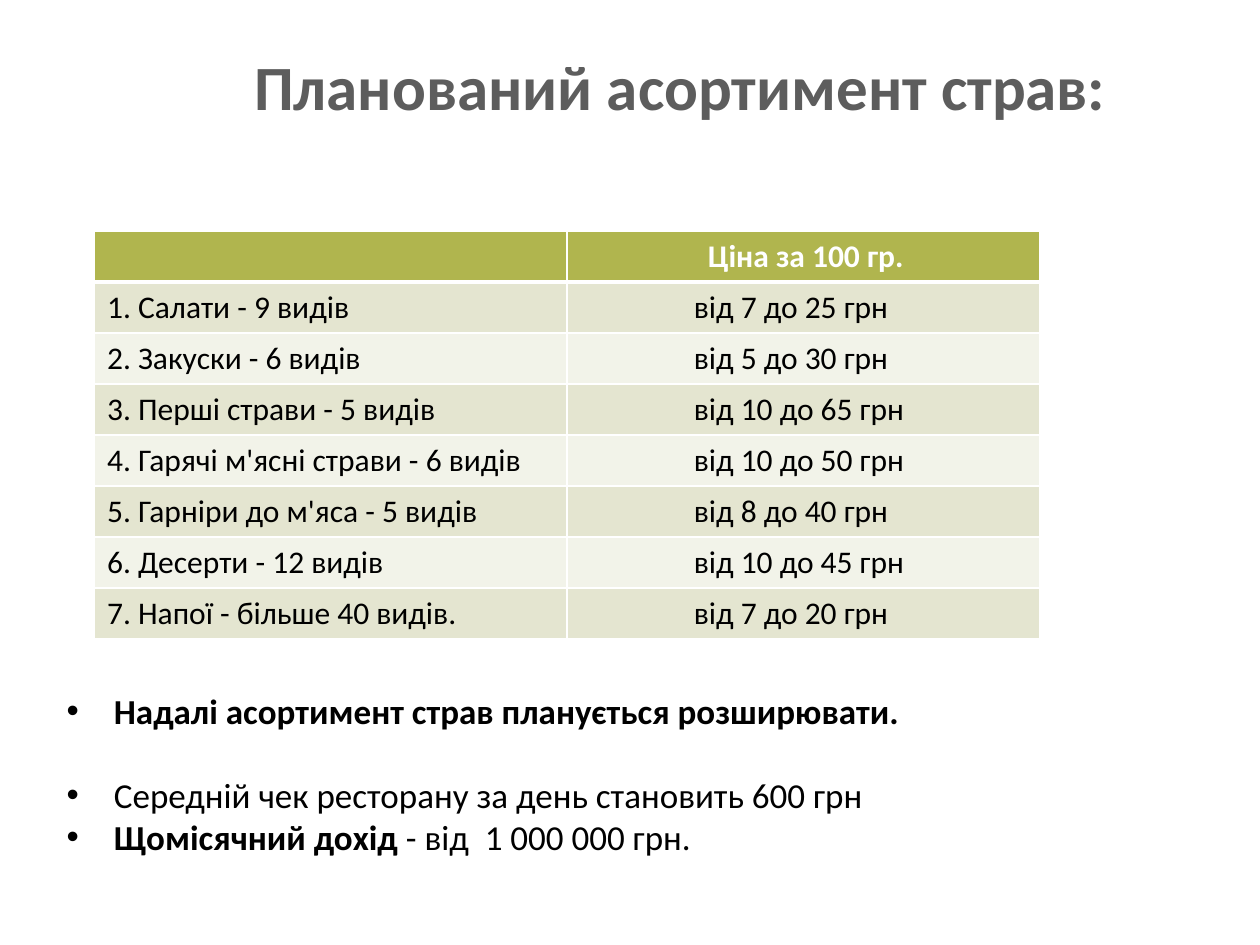
from dataclasses import dataclass

from lxml import etree
from pptx import Presentation
from pptx.dml.color import RGBColor
from pptx.enum import text
from pptx.oxml import ns
from pptx.slide import Slide
from pptx.util import Pt

COLORS = {
    "title": "5D5D5D",
    "header": "B0B54E",
    "odd": "E4E5D0",
    "even": "F2F3E9",
    "white": "FFFFFF",
    "ink": "000000",
}

DISHES = [
    ("1. Салати - 9 видів", "від 7 до 25 грн"),
    ("2. Закуски - 6 видів", "від 5 до 30 грн"),
    ("3. Перші страви - 5 видів", "від 10 до 65 грн"),
    ("4. Гарячі м'ясні страви - 6 видів", "від 10 до 50 грн"),
    ("5. Гарніри до м'яса - 5 видів", "від 8 до 40 грн"),
    ("6. Десерти - 12 видів", "від 10 до 45 грн"),
    ("7. Напої - більше 40 видів.", "від 7 до 20 грн"),
]

CONCLUSIONS = [
    (0, [("Надалі асортимент страв планується розширювати.", True)]),
    (24.4, [("Середній чек ресторану за день становить 600 грн", False)]),
    (0, [("Щомісячний дохід", True), (" - від  1 000 000 грн.", False)]),
]


@dataclass
class Menu:
    slide: Slide
    font: str = "Calibri"

    def run(self, paragraph, words, size, color, bold=False):
        run = paragraph.add_run()
        run.text = words
        run.font.name = self.font
        run.font.size = Pt(size)
        run.font.bold = bold
        run.font.color.rgb = RGBColor.from_string(COLORS[color])

    def frame(self, left, top, width, height, wrap):
        box = self.slide.shapes.add_textbox(Pt(left), Pt(top), Pt(width), Pt(height))
        box.text_frame.word_wrap = wrap
        return box.text_frame

    def title(self, words, place):
        heading = self.frame(*place, wrap=False)
        self.run(heading.paragraphs[0], words, 36, "title", True)

    def bullets(self, items, place, indent=27):
        body = self.frame(*place, wrap=True)
        for index, (gap, runs) in enumerate(items):
            item = body.add_paragraph() if index else body.paragraphs[0]
            props = item._p.get_or_add_pPr()
            props.set("marL", str(Pt(indent)))
            props.set("indent", str(-Pt(indent)))
            etree.SubElement(props, ns.qn("a:buFont"), typeface="Arial")
            etree.SubElement(props, ns.qn("a:buChar"), char="•")
            if gap:
                item.space_before = Pt(gap)
            for words, bold in runs:
                self.run(item, words, 20, "ink", bold)

    def borders(self, cell, top, bottom):
        props = cell._tc.get_or_add_tcPr()
        for index, (side, weight) in enumerate(zip("LRTB", (1, 1, top, bottom))):
            line = etree.Element(ns.qn(f"a:ln{side}"), w=str(Pt(weight)))
            fill = etree.SubElement(line, ns.qn("a:solidFill"))
            etree.SubElement(fill, ns.qn("a:srgbClr"), val=COLORS["white"])
            props.insert(index, line)

    def cell(self, cell, words, fill, color, bold, margin, edges):
        cell.fill.solid()
        cell.fill.fore_color.rgb = RGBColor.from_string(COLORS[fill])
        self.borders(cell, *edges)
        cell.margin_left = Pt(margin)
        if words:
            self.run(cell.text_frame.paragraphs[0], words, 18, color, bold)

    def table(self, header, rows, place):
        grid = self.slide.shapes.add_table(
            len(rows) + 1, len(header), *map(Pt, place)
        ).table
        for index, values in enumerate([header, *rows]):
            is_header = index == 0
            fill = "header" if is_header else "odd" if index % 2 else "even"
            color = "white" if is_header else "ink"
            margins = (7.2, 80.5 if is_header else 72.5)
            edges = (3 if index == 1 else 1, 3 if is_header else 1)
            for column, (words, margin) in enumerate(zip(values, margins)):
                self.cell(grid.cell(index, column), words, fill, color,
                          is_header, margin, edges)


def main():
    deck = Presentation()
    deck.slide_width, deck.slide_height = Pt(720), Pt(540)
    menu = Menu(deck.slides.add_slide(deck.slide_layouts[6]))
    menu.title("Планований асортимент страв:", (138.2, 23.8, 505.4, 51.1))
    menu.table(("", "Ціна за 100 гр."), DISHES, (54, 132, 540, 233.3))
    menu.bullets(CONCLUSIONS, (31, 390.2, 521.3, 104.4))
    deck.save("out.pptx")


if __name__ == "__main__":
    main()
